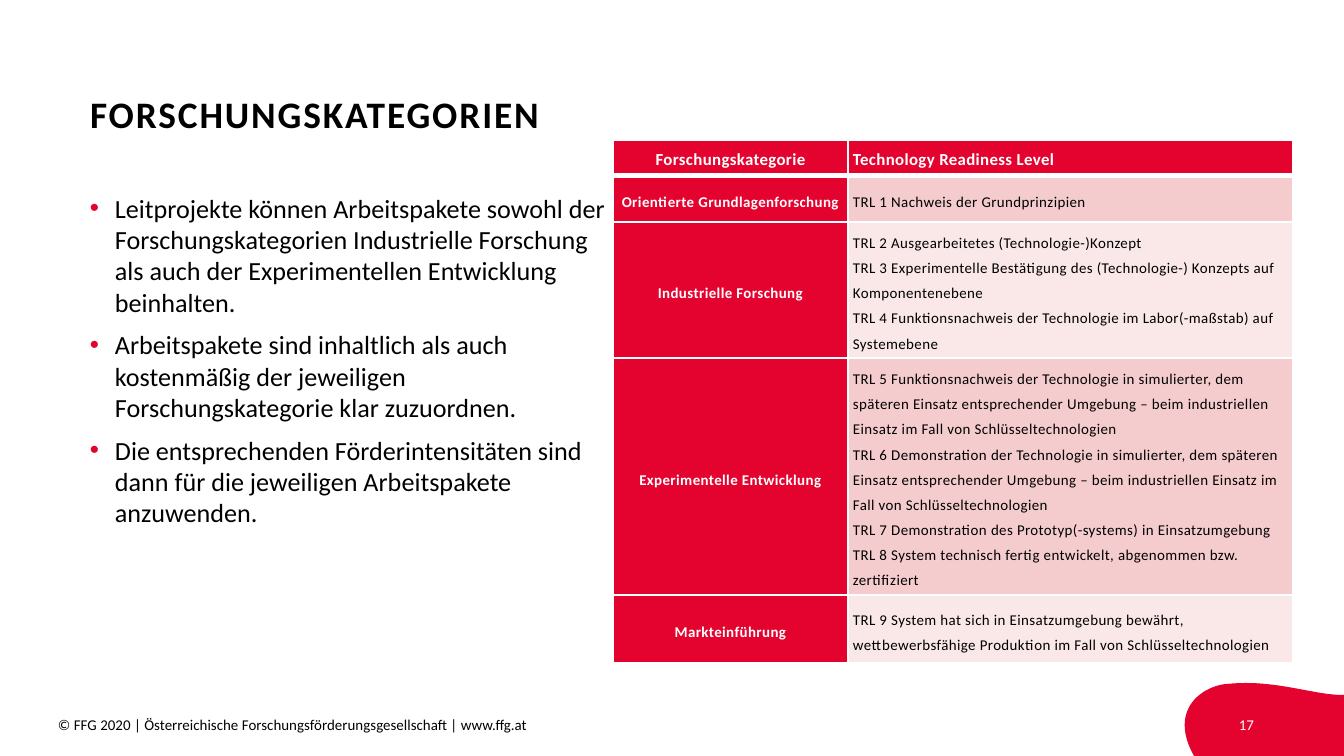
from lxml.etree import SubElement
from pptx import Presentation
from pptx.dml.color import RGBColor
from pptx.enum.text import MSO_ANCHOR as Anchor, MSO_AUTO_SIZE as AutoSize, PP_ALIGN as Align
from pptx.oxml.ns import qn
from pptx.util import Pt

SCALE = 914400 / 134.4
FONT = "Calibri"
RED, BULLET_RED, WHITE, BLACK = "E4032E", "E3032E", "FFFFFF", "000000"
BANDS = ("F5CCCD", "FAE7E8")
COLUMN_WIDTHS = (235, 445)
ROW_HEIGHTS = (35, 47, 136, 237, 68)
BULLETS = (
    "Leitprojekte können Arbeitspakete sowohl der Forschungskategorien Industrielle Forschung "
    "als auch der Experimentellen Entwicklung beinhalten.",
    "Arbeitspakete sind inhaltlich als auch kostenmäßig der jeweiligen Forschungskategorie "
    "klar zuzuordnen.",
    "Die entsprechenden Förderintensitäten sind dann für die jeweiligen Arbeitspakete anzuwenden.",
)
HEADER = ("Forschungskategorie", "Technology Readiness Level")
CATEGORIES = (
    ("Orientierte Grundlagenforschung", ("TRL 1 Nachweis der Grundprinzipien",)),
    ("Industrielle Forschung", (
        "TRL 2 Ausgearbeitetes (Technologie-)Konzept",
        "TRL 3 Experimentelle Bestätigung des (Technologie-) Konzepts auf Komponentenebene",
        "TRL 4 Funktionsnachweis der Technologie im Labor(-maßstab) auf Systemebene",
    )),
    ("Experimentelle Entwicklung", (
        "TRL 5 Funktionsnachweis der Technologie in simulierter, dem späteren Einsatz "
        "entsprechender Umgebung – beim industriellen Einsatz im Fall von Schlüsseltechnologien",
        "TRL 6 Demonstration der Technologie in simulierter, dem späteren Einsatz "
        "entsprechender Umgebung – beim industriellen Einsatz im Fall von Schlüsseltechnologien",
        "TRL 7 Demonstration des Prototyp(-systems) in Einsatzumgebung",
        "TRL 8 System technisch fertig entwickelt, abgenommen bzw. zertifiziert",
    )),
    ("Markteinführung", (
        "TRL 9 System hat sich in Einsatzumgebung bewährt, wettbewerbsfähige Produktion "
        "im Fall von Schlüsseltechnologien",
    )),
)


def px(length):
    """Turn pixels into EMU."""
    return round(length * SCALE)


def color(value):
    """Turn a hex string into a colour."""
    return RGBColor.from_string(value)


def add_run(paragraph, text, size, fill=BLACK, bold=False, spacing=0):
    """Add one formatted run, with letter spacing in points."""
    run = paragraph.add_run()
    run.text = text
    run.font.name = FONT
    run.font.size = Pt(size)
    run.font.bold = bold
    run.font.color.rgb = color(fill)
    if spacing:
        run._r.get_or_add_rPr().set("spc", str(round(spacing * 100)))


def add_paragraphs(frame, texts):
    """Yield one paragraph of the frame for each text."""
    for index, text in enumerate(texts):
        yield (frame.add_paragraph() if index else frame.paragraphs[0]), text


def prepare_frame(frame, anchor=Anchor.TOP):
    """Wrap the text and clear the insets."""
    frame.word_wrap = True
    frame.auto_size = AutoSize.NONE
    frame.vertical_anchor = anchor
    frame.margin_left = frame.margin_right = frame.margin_top = frame.margin_bottom = 0


def add_title(slide, text):
    """Place and format the title placeholder."""
    title = slide.shapes.title
    title.left, title.top, title.width, title.height = map(px, (90, 40, 1005, 152))
    prepare_frame(title.text_frame, Anchor.MIDDLE)
    paragraph = title.text_frame.paragraphs[0]
    paragraph.alignment = Align.LEFT
    paragraph.line_spacing = 0.9
    add_run(paragraph, text, 20, bold=True, spacing=1)


def add_text_box(slide, box):
    """Add an empty text box and return its frame."""
    frame = slide.shapes.add_textbox(*map(px, box)).text_frame
    prepare_frame(frame)
    return frame


def add_label(slide, box, text, fill=BLACK, alignment=Align.LEFT):
    """Add one line of footer text."""
    paragraph = add_text_box(slide, box).paragraphs[0]
    paragraph.alignment = alignment
    add_run(paragraph, text, 8, fill)


def add_bullets(slide, box, texts):
    """Add a bulleted list with red bullets."""
    frame = add_text_box(slide, box)
    for index, (paragraph, text) in enumerate(add_paragraphs(frame, texts)):
        properties = paragraph._p.get_or_add_pPr()
        properties.set("marL", str(px(25)))
        properties.set("indent", str(px(-25)))
        bullet_color = SubElement(properties, qn("a:buClr"))
        SubElement(bullet_color, qn("a:srgbClr"), val=BULLET_RED)
        SubElement(properties, qn("a:buFont"), typeface="Arial")
        SubElement(properties, qn("a:buChar"), char="•")
        if index:
            paragraph.space_before = Pt(6)
        add_run(paragraph, text, 14)


def curve(start, first, second, end, steps=24):
    """Return points along a cubic curve, without its start."""
    points = []
    for step in range(1, steps + 1):
        t = step / steps
        weights = ((1 - t) ** 3, 3 * t * (1 - t) ** 2, 3 * t * t * (1 - t), t ** 3)
        points.append(tuple(
            px(sum(weight * value for weight, value in zip(weights, values)))
            for values in zip(start, first, second, end)
        ))
    return points


def add_corner_wave(slide):
    """Draw the red wave behind the page number."""
    start, right, bottom = (1228, 684), (1344, 695), (1194, 756)
    points = curve(start, (1275, 679), (1316, 696), right)
    points += [(px(1344), px(756)), tuple(map(px, bottom))]
    points += curve(bottom, (1167, 708), (1205, 685), start)
    builder = slide.shapes.build_freeform(*map(px, start))
    builder.add_line_segments(points, close=True)
    wave = builder.convert_to_shape()
    wave.shadow.inherit = False
    wave.fill.solid()
    wave.fill.fore_color.rgb = color(RED)
    wave.line.fill.background()


def set_borders(cell, top, bottom):
    """Give a cell white borders, with top and bottom widths in points."""
    properties = cell._tc.get_or_add_tcPr()
    for side, width in (("L", 1), ("R", 1), ("T", top), ("B", bottom)):
        line = SubElement(properties, qn(f"a:ln{side}"), w=str(Pt(width)))
        SubElement(SubElement(line, qn("a:solidFill")), qn("a:srgbClr"), val=WHITE)


def fill_cell(cell, texts, fill, font_color, size, alignment):
    """Fill a cell and write its paragraphs."""
    cell.fill.solid()
    cell.fill.fore_color.rgb = color(fill)
    cell.vertical_anchor = Anchor.MIDDLE
    cell.margin_left = cell.margin_right = cell.margin_top = cell.margin_bottom = px(5)
    for paragraph, text in add_paragraphs(cell.text_frame, texts):
        paragraph.alignment = alignment
        paragraph.line_spacing = Pt(13.5)
        add_run(paragraph, text, size, font_color, font_color == WHITE, 0.2)


def add_category_table(slide, left, top):
    """Add the table of research categories and readiness levels."""
    table = slide.shapes.add_table(
        len(ROW_HEIGHTS), len(COLUMN_WIDTHS), px(left), px(top),
        px(sum(COLUMN_WIDTHS)), px(sum(ROW_HEIGHTS)),
    ).table
    for column, width in zip(table.columns, COLUMN_WIDTHS):
        column.width = px(width)
    rows = ((HEADER[0], HEADER[1:]), *CATEGORIES)
    for index, (category, levels) in enumerate(rows):
        table.rows[index].height = px(ROW_HEIGHTS[index])
        label, detail = table.rows[index].cells
        for cell in (label, detail):
            set_borders(cell, 3 if index == 1 else 1, 1 if index else 3)
        size = 8 if index else 9
        fill, font_color = (BANDS[(index - 1) % 2], BLACK) if index else (RED, WHITE)
        fill_cell(label, (category,), RED, WHITE, size, Align.CENTER)
        fill_cell(detail, levels, fill, font_color, size, Align.LEFT)


def main():
    """Build and save the slide."""
    presentation = Presentation()
    presentation.slide_width, presentation.slide_height = px(1344), px(756)
    slide = presentation.slides.add_slide(presentation.slide_layouts[5])
    add_corner_wave(slide)
    add_title(slide, "FORSCHUNGSKATEGORIEN")
    add_bullets(slide, (90, 192, 523, 472), BULLETS)
    add_label(slide, (58, 716, 640, 26),
              "© FFG 2020 | Österreichische Forschungsförderungsgesellschaft | www.ffg.at")
    add_label(slide, (1184, 716, 70, 26), "17", WHITE, Align.RIGHT)
    add_category_table(slide, 613, 140)
    presentation.save("out.pptx")


if __name__ == "__main__":
    main()
